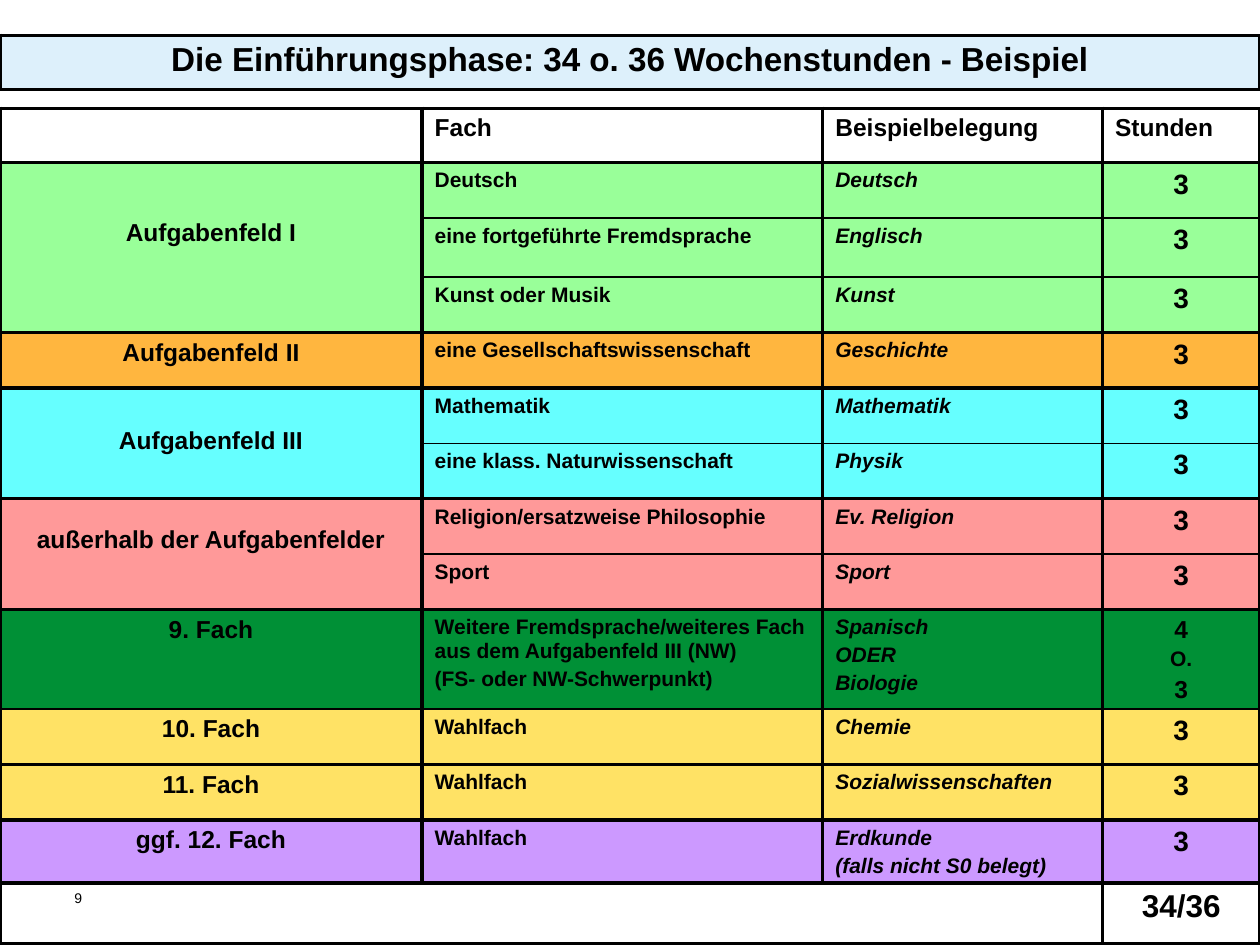
import pptx
import pptx.util
import pptx.dml.color
import pptx.enum.text
import pptx.oxml
from lxml import etree

Inches = pptx.util.Inches
Pt = pptx.util.Pt
RGBColor = pptx.dml.color.RGBColor
LEFT = pptx.enum.text.PP_ALIGN.LEFT
CENTER = pptx.enum.text.PP_ALIGN.CENTER

BLACK = RGBColor(0x00, 0x00, 0x00)
PALE_BLUE = RGBColor(0xDD, 0xF0, 0xFB)
LIGHT_GREEN = RGBColor(0x99, 0xFF, 0x99)
ORANGE = RGBColor(0xFF, 0xB6, 0x3F)
CYAN = RGBColor(0x66, 0xFF, 0xFF)
PINK = RGBColor(0xFF, 0x99, 0x99)
DARK_GREEN = RGBColor(0x00, 0x90, 0x36)
YELLOW = RGBColor(0xFF, 0xE2, 0x65)
PURPLE = RGBColor(0xCC, 0x99, 0xFF)

THICK, THIN = 2.25, 1
FONT = "Arial"
TITLE = "Die Einführungsphase: 34 o. 36 Wochenstunden - Beispiel"
HEADERS = ["Fach", "Beispielbelegung", "Stunden"]
TOTAL = "34/36"
PAGE_NUMBER = "9"

GROUPS = [
    ("Aufgabenfeld I", 0.45, LIGHT_GREEN, [
        ("Deutsch", "Deutsch", "3"),
        ("eine fortgeführte Fremdsprache", "Englisch", "3"),
        ("Kunst oder Musik", "Kunst", "3")]),
    ("Aufgabenfeld II", 0.05, ORANGE, [
        ("eine Gesellschaftswissenschaft", "Geschichte", "3")]),
    ("Aufgabenfeld III", 0.31, CYAN, [
        ("Mathematik", "Mathematik", "3"),
        ("eine klass. Naturwissenschaft", "Physik", "3")]),
    ("außerhalb der Aufgabenfelder", 0.22, PINK, [
        ("Religion/ersatzweise Philosophie", "Ev. Religion", "3"),
        ("Sport", "Sport", "3")]),
    ("9. Fach", 0.05, DARK_GREEN, [
        ("Weitere Fremdsprache/weiteres Fach aus dem Aufgabenfeld III (NW)\n"
         "(FS- oder NW-Schwerpunkt)", "Spanisch\nODER\nBiologie", "4\nO.\n3")]),
    ("10. Fach", 0.05, YELLOW, [("Wahlfach", "Chemie", "3")]),
    ("11. Fach", 0.05, YELLOW, [("Wahlfach", "Sozialwissenschaften", "3")]),
    ("ggf. 12. Fach", 0.05, PURPLE, [
        ("Wahlfach", "Erdkunde\n(falls nicht S0 belegt)", "3")]),
]
COLUMN_WIDTHS = [3.35, 3.18, 2.22, 1.25]
ROW_HEIGHTS = [0.43, 0.44, 0.47] + [0.44] * 6 + [0.79, 0.44, 0.44, 0.5, 0.48]
THIN_AFTER_LABELS = {"9. Fach"}


def write(text_frame, text, sizes, alignment=LEFT, bold=True, italic=False):
    text_frame.text = text
    for index, paragraph in enumerate(text_frame.paragraphs):
        size = sizes[index % len(sizes)]
        paragraph.alignment = alignment
        paragraph.space_before = Pt(0.2 * size if index else 0)
        for run in paragraph.runs:
            run.font.name = FONT
            run.font.size = Pt(size)
            run.font.bold = bold
            run.font.italic = italic
            run.font.color.rgb = BLACK


def style_cell(cell, fill=None, top=THICK, bottom=THICK):
    cell.margin_bottom = 0
    properties = cell._tc.get_or_add_tcPr()
    for side, width in (("L", THICK), ("R", THICK), ("T", top), ("B", bottom)):
        line = etree.SubElement(properties, pptx.oxml.ns.qn(f"a:ln{side}"), w=str(Pt(width)))
        solid = etree.SubElement(line, pptx.oxml.ns.qn("a:solidFill"))
        etree.SubElement(solid, pptx.oxml.ns.qn("a:srgbClr"), val=str(BLACK))
    if fill is None:
        cell.fill.background()
    else:
        cell.fill.solid()
        cell.fill.fore_color.rgb = fill


def add_table(slide, top, widths, heights):
    table = slide.shapes.add_table(
        len(heights), len(widths), Inches(0), Inches(top),
        Inches(sum(widths)), Inches(sum(heights))).table
    table.first_row = False
    table.horz_banding = False
    for column, width in zip(table.columns, widths):
        column.width = Inches(width)
    for row, height in zip(table.rows, heights):
        row.height = Inches(height)
    return table


def fill_plan(table):
    for column in range(4):
        style_cell(table.cell(0, column))
    for column, header in enumerate(HEADERS, 1):
        write(table.cell(0, column).text_frame, header, [14])

    row, top = 1, THICK
    for label, label_margin, fill, subjects in GROUPS:
        first, last = row, row + len(subjects) - 1
        group_top = top
        for subject, example, hours in subjects:
            thin_below = row < last or label in THIN_AFTER_LABELS
            bottom = THIN if thin_below else THICK
            for column in range(1, 4):
                style_cell(table.cell(row, column), fill, top, bottom)
            write(table.cell(row, 1).text_frame, subject, [12])
            write(table.cell(row, 2).text_frame, example, [12], italic=True)
            hour_sizes = [14, 12, 14] if "\n" in hours else [16]
            write(table.cell(row, 3).text_frame, hours, hour_sizes, CENTER)
            row, top = row + 1, bottom
        for label_row in range(first, last + 1):
            style_cell(table.cell(label_row, 0), fill, group_top, bottom)
        label_cell = table.cell(first, 0)
        if last > first:
            label_cell.merge(table.cell(last, 0))
        label_cell.margin_top = Inches(label_margin)
        write(label_cell.text_frame, label, [14], CENTER)

    for column in range(4):
        style_cell(table.cell(row, column))
    table.cell(row, 0).merge(table.cell(row, 2))
    write(table.cell(row, 3).text_frame, TOTAL, [18], CENTER)


def main():
    presentation = pptx.Presentation()
    presentation.slide_width = Inches(10)
    presentation.slide_height = Inches(7.5)
    slide = presentation.slides.add_slide(presentation.slide_layouts[6])

    number_box = slide.shapes.add_textbox(Inches(0.59), Inches(7.06), Inches(0.32), Inches(0.37))
    number_frame = number_box.text_frame
    number_frame.word_wrap = True
    number_frame.margin_left = number_frame.margin_right = 0
    number_frame.margin_top = number_frame.margin_bottom = 0
    write(number_frame, PAGE_NUMBER, [8], bold=False)

    title_cell = add_table(slide, 0.28, [10], [0.43]).cell(0, 0)
    style_cell(title_cell, PALE_BLUE)
    write(title_cell.text_frame, TITLE, [19], CENTER)

    fill_plan(add_table(slide, 0.86, COLUMN_WIDTHS, ROW_HEIGHTS))
    presentation.save("out.pptx")


if __name__ == "__main__":
    main()
